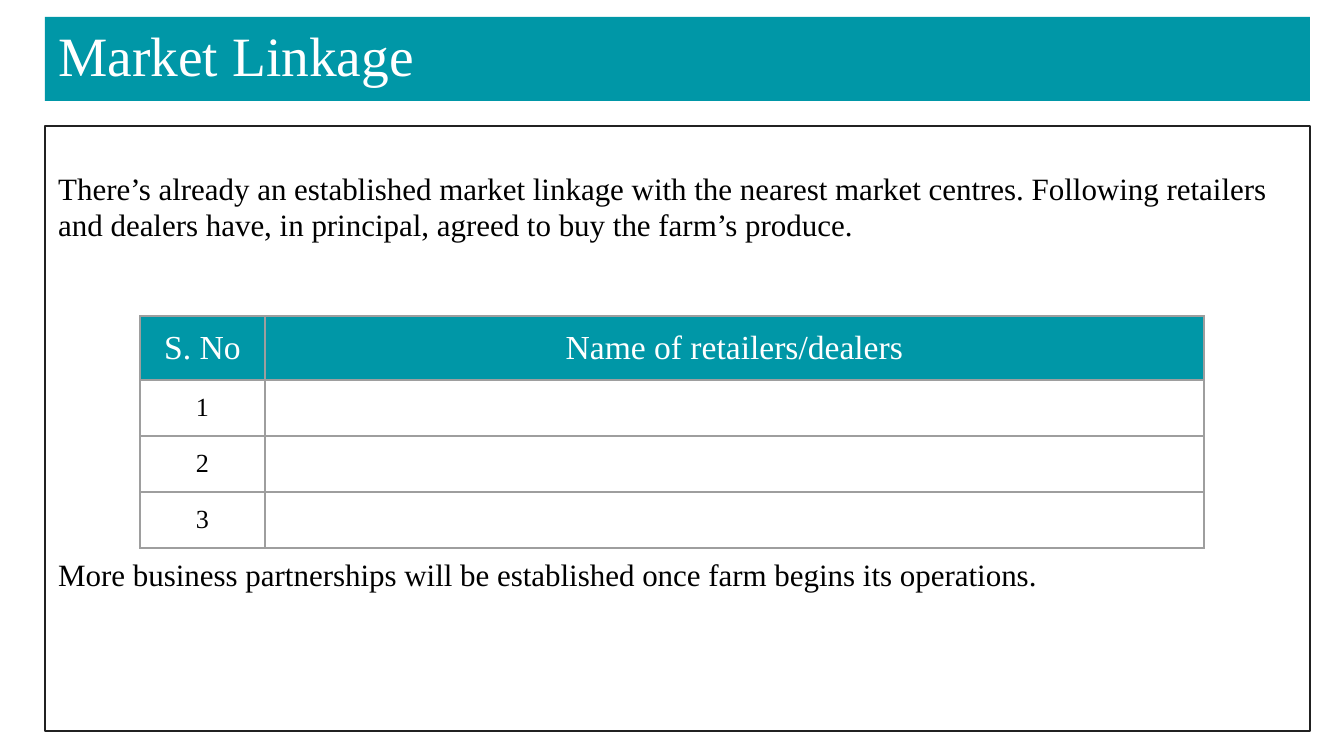
"""Build the Market Linkage slide with its table of retailers and dealers."""
from dataclasses import dataclass

import lxml.etree
import pptx
import pptx.dml.color
import pptx.enum.shapes
import pptx.enum.text
import pptx.oxml.ns
import pptx.slide
import pptx.text.text
import pptx.util

EMU_PER_PX = 9144000 / 1344


@dataclass(frozen=True)
class Theme:
    font: str = "Times New Roman"
    teal: str = "0097A7"
    white: str = "FFFFFF"
    black: str = "000000"
    outline: str = "212121"
    grid: str = "9E9E9E"
    title_size: float = 29.7
    body_size: float = 16.6
    header_size: float = 18
    cell_size: float = 14
    outline_width: float = 1
    grid_width: float = 0.75


@dataclass(frozen=True)
class Panel:
    left: int
    top: int
    width: int
    height: int
    paragraphs: tuple[str, ...]
    size: float
    color: str
    fill: str
    anchor: pptx.enum.text.MSO_ANCHOR
    inset_top: int
    inset_bottom: int
    line: str | None = None
    line_spacing: float = 1.0
    paragraph_gap: int = 0


@dataclass(frozen=True)
class Grid:
    left: int
    top: int
    columns: tuple[int, ...]
    rows: tuple[int, ...]
    cells: tuple[tuple[str, ...], ...]


THEME = Theme()

TITLE = Panel(
    45, 17, 1265, 84, ("Market Linkage",), THEME.title_size, THEME.white,
    THEME.teal, pptx.enum.text.MSO_ANCHOR.BOTTOM, 7, 13,
)
BODY = Panel(
    45, 126, 1265, 605,
    (
        "There’s already an established market linkage with the nearest market centres. "
        "Following retailers and dealers have, in principal, agreed to buy the farm’s produce.",
        "More business partnerships will be established once farm begins its operations.",
    ),
    THEME.body_size, THEME.black, THEME.white, pptx.enum.text.MSO_ANCHOR.TOP, 45, 7,
    line=THEME.outline, line_spacing=0.98, paragraph_gap=313,
)
RETAILERS = Grid(
    140, 316, (125, 939), (64, 56, 56, 56),
    (("S. No", "Name of retailers/dealers"), ("1", ""), ("2", ""), ("3", "")),
)


def px(length: int) -> pptx.util.Emu:
    return pptx.util.Emu(round(length * EMU_PER_PX))


def rgb(color: str) -> pptx.dml.color.RGBColor:
    return pptx.dml.color.RGBColor.from_string(color)


def style_font(paragraph: pptx.text.text._Paragraph, size: float, color: str) -> None:
    font = paragraph.font
    font.name = THEME.font
    font.size = pptx.util.Pt(size)
    font.bold = False
    font.color.rgb = rgb(color)


def draw_panel(slide: pptx.slide.Slide, panel: Panel) -> None:
    shape = slide.shapes.add_shape(
        pptx.enum.shapes.MSO_SHAPE.RECTANGLE,
        px(panel.left), px(panel.top), px(panel.width), px(panel.height),
    )
    shape.shadow.inherit = False
    shape.fill.solid()
    shape.fill.fore_color.rgb = rgb(panel.fill)
    if panel.line:
        shape.line.color.rgb = rgb(panel.line)
        shape.line.width = pptx.util.Pt(THEME.outline_width)
    else:
        shape.line.fill.background()
    frame = shape.text_frame
    frame.word_wrap = True
    frame.vertical_anchor = panel.anchor
    frame.margin_top = px(panel.inset_top)
    frame.margin_bottom = px(panel.inset_bottom)
    for index, text in enumerate(panel.paragraphs):
        paragraph = frame.add_paragraph() if index else frame.paragraphs[0]
        paragraph.text = text
        paragraph.alignment = pptx.enum.text.PP_ALIGN.LEFT
        paragraph.line_spacing = panel.line_spacing
        if index:
            paragraph.space_before = pptx.util.Pt(round(px(panel.paragraph_gap).pt))
        style_font(paragraph, panel.size, panel.color)


def add_borders(cell: "pptx.table._Cell") -> None:
    properties = cell._tc.get_or_add_tcPr()
    qn = pptx.oxml.ns.qn
    for side in ("a:lnL", "a:lnR", "a:lnT", "a:lnB"):
        line = lxml.etree.SubElement(
            properties, qn(side), w=str(pptx.util.Pt(THEME.grid_width))
        )
        fill = lxml.etree.SubElement(line, qn("a:solidFill"))
        lxml.etree.SubElement(fill, qn("a:srgbClr"), val=THEME.grid)


def draw_grid(slide: pptx.slide.Slide, grid: Grid) -> None:
    table = slide.shapes.add_table(
        len(grid.rows), len(grid.columns), px(grid.left), px(grid.top),
        px(sum(grid.columns)), px(sum(grid.rows)),
    ).table
    table.first_row = False
    table.horz_banding = False
    for column, width in zip(table.columns, grid.columns):
        column.width = px(width)
    for row_index, (row, height) in enumerate(zip(table.rows, grid.rows)):
        row.height = px(height)
        is_header = row_index == 0
        for cell, text in zip(row.cells, grid.cells[row_index]):
            add_borders(cell)
            cell.fill.solid()
            cell.fill.fore_color.rgb = rgb(THEME.teal if is_header else THEME.white)
            cell.vertical_anchor = pptx.enum.text.MSO_ANCHOR.MIDDLE
            cell.margin_top = cell.margin_bottom = 0
            paragraph = cell.text_frame.paragraphs[0]
            if text:
                paragraph.text = text
            paragraph.alignment = pptx.enum.text.PP_ALIGN.CENTER
            style_font(
                paragraph,
                THEME.header_size if is_header else THEME.cell_size,
                THEME.white if is_header else THEME.black,
            )


def main() -> None:
    presentation = pptx.Presentation()
    presentation.slide_width = px(1344)
    presentation.slide_height = px(756)
    slide = presentation.slides.add_slide(presentation.slide_layouts[6])
    for panel in (TITLE, BODY):
        draw_panel(slide, panel)
    draw_grid(slide, RETAILERS)
    presentation.save("out.pptx")


if __name__ == "__main__":
    main()
